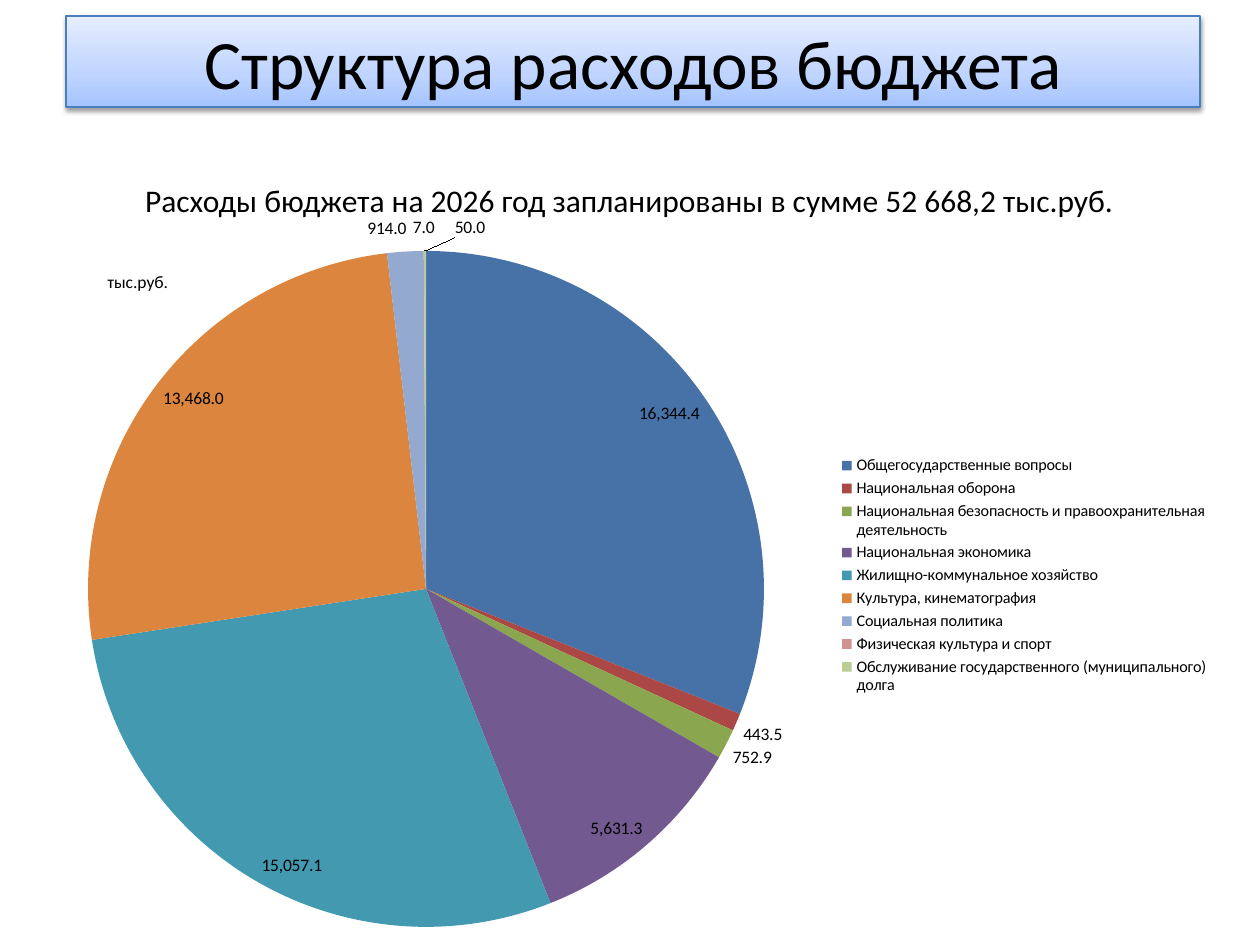
from lxml.etree import SubElement
from pptx import Presentation
from pptx.chart.data import CategoryChartData
from pptx.dml.color import RGBColor
from pptx.enum.chart import XL_CHART_TYPE as ChartType
from pptx.enum.chart import XL_LABEL_POSITION as LabelPosition
from pptx.enum.chart import XL_LEGEND_POSITION as LegendPosition
from pptx.enum.text import MSO_ANCHOR as Anchor
from pptx.enum.text import PP_ALIGN as Align
from pptx.oxml import parse_xml
from pptx.oxml.ns import nsdecls, qn
from pptx.util import Emu, Pt

FONT = "Calibri"
TITLE = "Структура расходов бюджета"
SUBTITLE = "Расходы бюджета на 2026 год запланированы в сумме 52 668,2 тыс.руб. "
UNIT = "тыс.руб."
INSIDE, OUTSIDE = LabelPosition.INSIDE_END, LabelPosition.OUTSIDE_END

# Category, value, slice colour, label position, label shift in px
EXPENSES = [
    ("Общегосударственные вопросы", 16344.4, "4672A8", INSIDE, None),
    ("Национальная оборона", 443.5, "AB4744", OUTSIDE, None),
    ("Национальная безопасность и правоохранительная деятельность", 752.9,
     "8AA64F", OUTSIDE, None),
    ("Национальная экономика", 5631.3, "725990", INSIDE, None),
    ("Жилищно-коммунальное хозяйство", 15057.1, "4299B0", INSIDE, None),
    ("Культура, кинематография ", 13468, "DC853E", INSIDE, None),
    ("Социальная политика", 914, "93A9D0", OUTSIDE, (-18, -6)),
    ("Физическая культура и спорт", 7, "D09392", OUTSIDE, (0, -6)),
    ("Обслуживание государственного (муниципального) долга", 50,
     "B9CD96", OUTSIDE, (45, -6)),
]
GRADIENT = [(0, "A4C4FF"), (35, "BFD4FF"), (100, "E6EEFF")]

# Left, top, width, height in px
TITLE_AREA = (66, 16, 1134, 91)
SUBTITLE_AREA = (66, 175, 1134, 50)
UNIT_AREA = (95, 265, 89, 34)
CHART_AREA = (49, 207, 1172, 738)
PIE_AREA = (88, 251, 676, 676)
LEGEND_AREA = (838, 452, 372, 247)


def px(length):
    return Emu(round(length * 914400 / 126))


def color(value):
    return RGBColor.from_string(value)


def style(font, size):
    font.name, font.size, font.color.rgb = FONT, Pt(size), color("000000")


def add_text(frame, text, size, align=Align.LEFT):
    frame.word_wrap = True
    para = frame.paragraphs[0]
    para.alignment = align
    span = para.add_run()
    span.text = text
    style(span.font, size)


def decorate_title(shape):
    """Give the title its gradient, border and drop shadow."""
    stops = "".join(
        f'<a:gs pos="{place * 1000}"><a:srgbClr val="{value}"/></a:gs>'
        for place, value in GRADIENT)
    properties = shape.element.spPr
    properties.append(parse_xml(
        f'<a:gradFill {nsdecls("a")} rotWithShape="1"><a:gsLst>{stops}</a:gsLst>'
        '<a:lin ang="16200000" scaled="1"/></a:gradFill>'))
    shape.line.color.rgb = color("4B7EBC")
    shape.line.width = Pt(0.75)
    properties.append(parse_xml(
        f'<a:effectLst {nsdecls("a")}><a:outerShdw blurRad="{Pt(3.1)}" '
        f'dist="{Pt(1.6)}" dir="5400000" rotWithShape="0"><a:srgbClr val="000000">'
        '<a:alpha val="38000"/></a:srgbClr></a:outerShdw></a:effectLst>'))


def make_layout(**values):
    """Build a manual chart layout from its settings, in schema order."""
    layout = parse_xml(f'<c:layout {nsdecls("c")}><c:manualLayout/></c:layout>')
    for name, value in values.items():
        SubElement(layout[0], qn(f"c:{name}"), val=str(value))
    return layout


def area_layout(area, **target):
    """Turn an area of the slide into fractions of the chart."""
    left, top, width, height = area
    chart_left, chart_top, chart_width, chart_height = CHART_AREA
    return make_layout(
        **target, xMode="edge", yMode="edge",
        x=round((left - chart_left) / chart_width, 4),
        y=round((top - chart_top) / chart_height, 4),
        w=round(width / chart_width, 4), h=round(height / chart_height, 4))


def replace_layout(parent, layout, index):
    for old in parent.findall(qn("c:layout")):
        parent.remove(old)
    parent.insert(index, layout)


def add_pie(page):
    data = CategoryChartData(number_format="#,##0.0")
    data.categories = [row[0] for row in EXPENSES]
    data.add_series("Series 1", [row[1] for row in EXPENSES])
    chart = page.shapes.add_chart(
        ChartType.PIE, *map(px, CHART_AREA), data).chart
    style(chart.font, 10)
    chart.has_title = False
    chart.has_legend = True
    legend = chart.legend
    legend.position = LegendPosition.RIGHT
    legend.include_in_layout = False
    style(legend.font, 9.2)
    replace_layout(legend._element, area_layout(LEGEND_AREA), 1)

    plot = chart.plots[0]
    plot.vary_by_categories = True
    plot_area = chart._chartSpace.chart.plotArea
    replace_layout(plot_area, area_layout(PIE_AREA, layoutTarget="inner"), 0)

    series = plot.series[0]
    labels = series.data_labels
    labels.show_value = True
    labels.number_format = "#,##0.0"
    labels.number_format_is_linked = False
    style(labels.font, 10)
    for index, (_, _, fill, position, shift) in enumerate(EXPENSES):
        point = series.points[index]
        point.format.fill.solid()
        point.format.fill.fore_color.rgb = color(fill)
        style(point.data_label.font, 10)
        point.data_label.position = position
        if shift:
            label = labels._element.xpath(f"c:dLbl[c:idx/@val={index}]")[0]
            label.insert(1, make_layout(
                x=round(shift[0] / CHART_AREA[2], 4),
                y=round(shift[1] / CHART_AREA[3], 4)))


def main():
    deck = Presentation()
    deck.slide_width, deck.slide_height = px(1260), px(945)
    page = deck.slides.add_slide(deck.slide_layouts[5])

    title = page.shapes.title
    title.left, title.top, title.width, title.height = map(px, TITLE_AREA)
    decorate_title(title)
    title.text_frame.vertical_anchor = Anchor.MIDDLE
    add_text(title.text_frame, TITLE, 39.6, Align.CENTER)

    for area, text, size, align in [
        (SUBTITLE_AREA, SUBTITLE, 18, Align.CENTER),
        (UNIT_AREA, UNIT, 10, Align.LEFT),
    ]:
        box = page.shapes.add_textbox(*map(px, area))
        add_text(box.text_frame, text, size, align)

    add_pie(page)
    deck.save("out.pptx")


if __name__ == "__main__":
    main()
